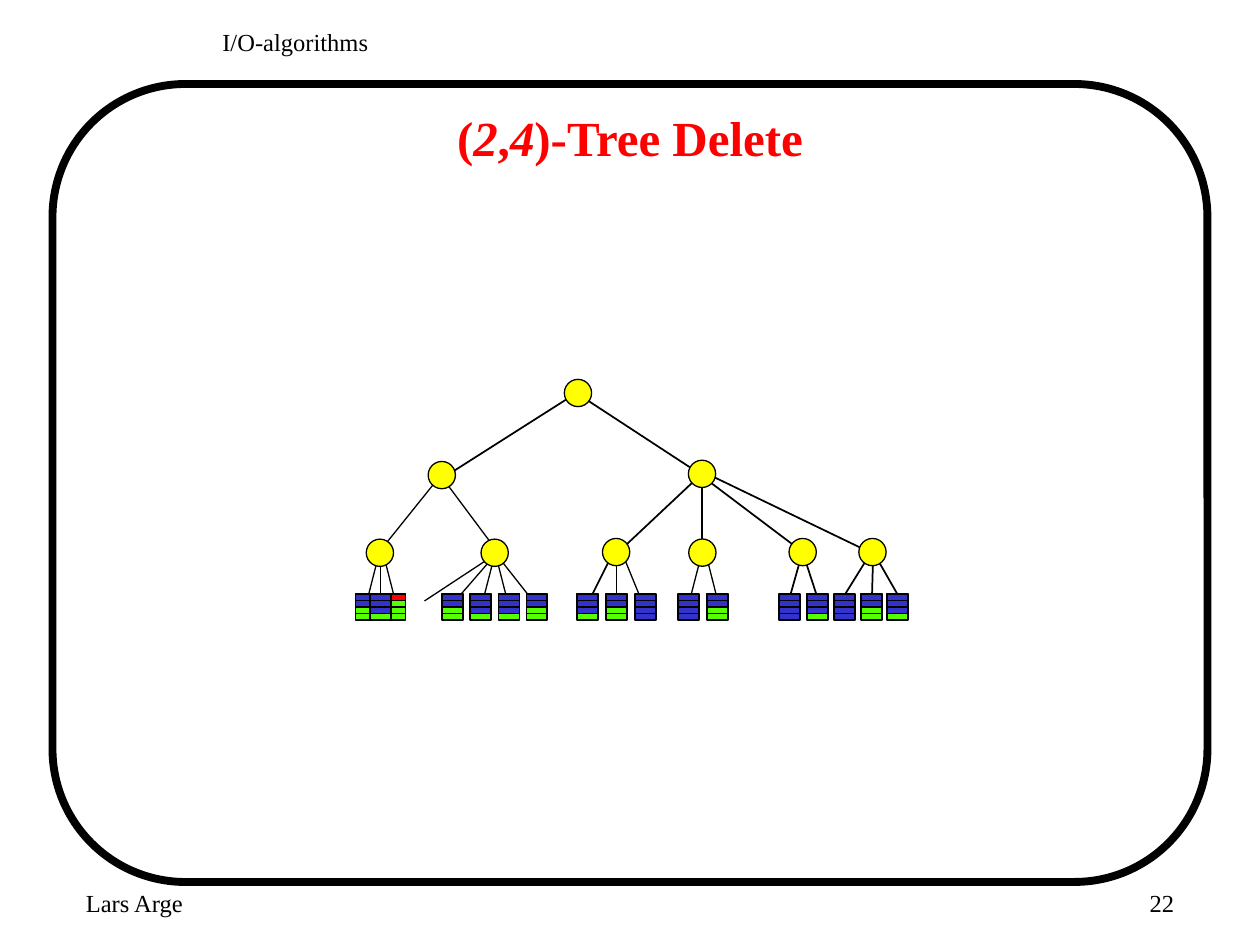
"""Build a slide showing a (2,4)-tree whose leaves are partly filled blocks."""
from dataclasses import dataclass

from lxml.etree import SubElement
from pptx import Presentation
from pptx.dml.color import RGBColor
from pptx.enum.shapes import MSO_CONNECTOR as Connector
from pptx.enum.shapes import MSO_SHAPE as Preset
from pptx.enum.text import MSO_ANCHOR as Anchor
from pptx.enum.text import PP_ALIGN as Align
from pptx.oxml.ns import qn
from pptx.shapes.autoshape import Shape
from pptx.slide import Slide
from pptx.text.text import Font
from pptx.util import Pt

BLACK = RGBColor(0x00, 0x00, 0x00)
RED = RGBColor(0xFF, 0x00, 0x00)
YELLOW = RGBColor(0xFF, 0xFF, 0x00)
GREEN = RGBColor(0x57, 0xFF, 0x03)
BLUE = RGBColor(0x33, 0x33, 0xCC)

TYPEFACE = "Times New Roman"
THIN, MEDIUM, THICK = 0.75, 1, 4.5
NODE_SIZE = 15.6
LEAF_TOP, LEAF_WIDTH, SLOT_HEIGHT, SLOTS = 339.4, 12, 3.75, 4


@dataclass(frozen=True)
class Node:
    x: float
    y: float


@dataclass(frozen=True)
class Edge:
    start: Node
    end: Node
    width: float = MEDIUM


@dataclass(frozen=True)
class Leaf:
    left: float
    filled: int
    colour: RGBColor = BLUE


@dataclass(frozen=True)
class Label:
    text: str
    left: float
    top: float
    width: float
    height: float
    align: Align = Align.LEFT


LABELS = [
    Label("Lars Arge", 42, 504, 150, 36),
    Label("I/O-algorithms", 120, 12, 474, 30),
    Label("22", 528, 504, 150, 36, Align.RIGHT),
]

NODES = [
    Node(330.3, 224.6), Node(252.5, 271.5), Node(401.2, 270.8),
    Node(217.1, 315.9), Node(282.7, 315.9), Node(352.1, 315.5),
    Node(401.4, 315.8), Node(458.7, 315.5), Node(498.6, 315.5),
]

EDGES = [
    Edge(Node(start_x, start_y), Node(end_x, end_y), width)
    for start_x, start_y, end_x, end_y, width in (
        (330.5, 223.9, 253.4, 272.9, MEDIUM),
        (328.3, 223.9, 403.2, 272.9, MEDIUM),
        (252, 271.4, 216.7, 315.4, THIN),
        (252.7, 272.9, 284.4, 315.4, THIN),
        (401.8, 270, 353.5, 315.4, MEDIUM),
        (401.1, 270, 401.1, 315.4, MEDIUM),
        (400.3, 271.4, 458.6, 315.4, MEDIUM),
        (401.1, 269.3, 498.2, 316.1, MEDIUM),
        (216.7, 316, 208.8, 347, THIN),
        (217.4, 315.4, 217.4, 341.3, THIN),
        (218.9, 316, 226.8, 347, THIN),
        (283, 316.8, 242.6, 343.4, THIN),
        (284.4, 315.4, 257, 347, THIN),
        (283, 316, 275, 347, THIN),
        (283, 316, 290.9, 347, THIN),
        (283, 316, 307.4, 347, THIN),
        (350.6, 315.4, 335.5, 345.6, MEDIUM),
        (352.1, 315.4, 352.1, 346.3, THIN),
        (356.4, 318.2, 367.9, 346.3, THIN),
        (401.1, 316, 393.1, 347, THIN),
        (403.2, 316, 411.1, 347, THIN),
        (458.6, 315.4, 450.7, 343.4, MEDIUM),
        (458.6, 315.4, 468, 344.2, MEDIUM),
        (497.5, 316.1, 481, 342.7, MEDIUM),
        (499, 315.4, 498.2, 344.2, MEDIUM),
        (499, 315.4, 515.5, 344.2, MEDIUM),
    )
]

LEAVES = [
    Leaf(219.8, 1, RED), Leaf(203.2, 2), Leaf(211.5, 3),
    Leaf(252.6, 2), Leaf(268.6, 3), Leaf(284.9, 3), Leaf(300.8, 2),
    Leaf(329.6, 3), Leaf(346.4, 2), Leaf(362.8, 4),
    Leaf(387.5, 4), Leaf(403.9, 2),
    Leaf(445.1, 4), Leaf(461, 3),
    Leaf(476.6, 4), Leaf(492, 2), Leaf(506.8, 3),
]


def style_font(font: Font, size: float, colour: RGBColor) -> None:
    font.name = TYPEFACE
    font.size = Pt(size)
    font.color.rgb = colour


def draw_shape(page: Slide, preset: Preset, left: float, top: float, width: float,
               height: float, fill: RGBColor | None, line_width: float) -> Shape:
    shape = page.shapes.add_shape(preset, Pt(left), Pt(top), Pt(width), Pt(height))
    shape.shadow.inherit = False
    if fill is None:
        shape.fill.background()
    else:
        shape.fill.solid()
        shape.fill.fore_color.rgb = fill
    shape.line.color.rgb = BLACK
    shape.line.width = Pt(line_width)
    return shape


def draw_edge(page: Slide, edge: Edge) -> None:
    line = page.shapes.add_connector(
        Connector.STRAIGHT, Pt(edge.start.x), Pt(edge.start.y),
        Pt(edge.end.x), Pt(edge.end.y))
    line.line.color.rgb = BLACK
    line.line.width = Pt(edge.width)
    SubElement(line._element.spPr, qn("a:effectLst"))


def draw_node(page: Slide, node: Node) -> None:
    draw_shape(page, Preset.OVAL, node.x - NODE_SIZE / 2, node.y - NODE_SIZE / 2,
               NODE_SIZE, NODE_SIZE, YELLOW, THIN)


def draw_leaf(page: Slide, leaf: Leaf) -> None:
    blocks = [(leaf.filled, leaf.colour)]
    if leaf.filled < SLOTS:
        blocks.insert(0, (SLOTS, GREEN))
    for slots, colour in blocks:
        draw_shape(page, Preset.RECTANGLE, leaf.left, LEAF_TOP, LEAF_WIDTH,
                   slots * SLOT_HEIGHT, colour, MEDIUM)
    for slot in range(1, SLOTS):
        if slot != leaf.filled:
            y = LEAF_TOP + slot * SLOT_HEIGHT
            draw_edge(page, Edge(Node(leaf.left, y), Node(leaf.left + LEAF_WIDTH, y)))


def draw_label(page: Slide, label: Label) -> None:
    box = page.shapes.add_textbox(Pt(label.left), Pt(label.top),
                                  Pt(label.width), Pt(label.height))
    box.text_frame.word_wrap = True
    box.text_frame.text = label.text
    para = box.text_frame.paragraphs[0]
    para.alignment = label.align
    style_font(para.runs[0].font, 14, BLACK)


def write_title(page: Slide) -> None:
    title = page.shapes.title
    title.left, title.top, title.width, title.height = Pt(54), Pt(54), Pt(612), Pt(48)
    title.text_frame.vertical_anchor = Anchor.MIDDLE
    para = title.text_frame.paragraphs[0]
    para.alignment = Align.CENTER
    for text in ("(", "2", ",", "4", ")-Tree Delete"):
        span = para.add_run()
        span.text = text
        style_font(span.font, 28, RED)
        span.font.bold = True
        span.font.italic = text.isdigit()


def main() -> None:
    deck = Presentation()
    deck.slide_width, deck.slide_height = Pt(720), Pt(540)
    page = deck.slides.add_slide(deck.slide_layouts.get_by_name("Title Only"))
    write_title(page)
    draw_shape(page, Preset.FLOWCHART_ALTERNATE_PROCESS, 30, 48, 660, 456, None, THICK)
    for label in LABELS:
        draw_label(page, label)
    for edge in EDGES:
        draw_edge(page, edge)
    for node in NODES:
        draw_node(page, node)
    for leaf in LEAVES:
        draw_leaf(page, leaf)
    deck.save("out.pptx")


if __name__ == "__main__":
    main()
